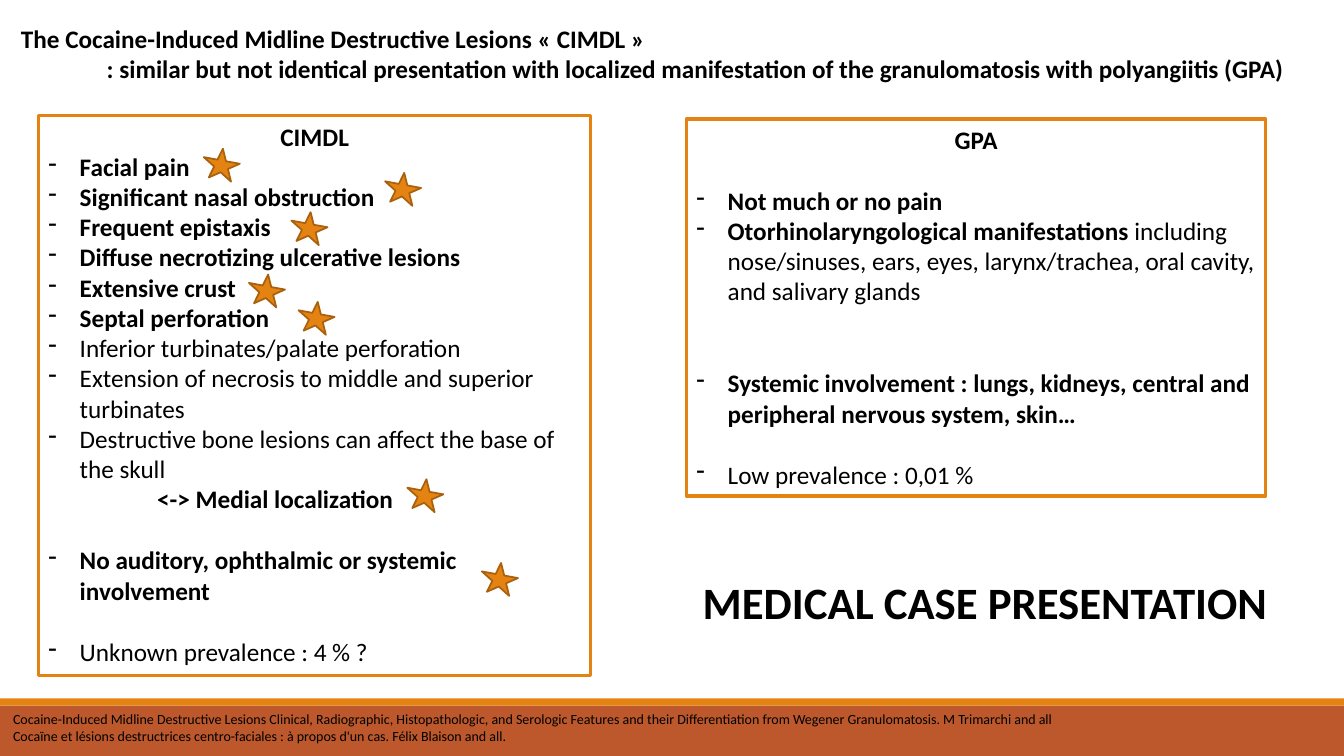
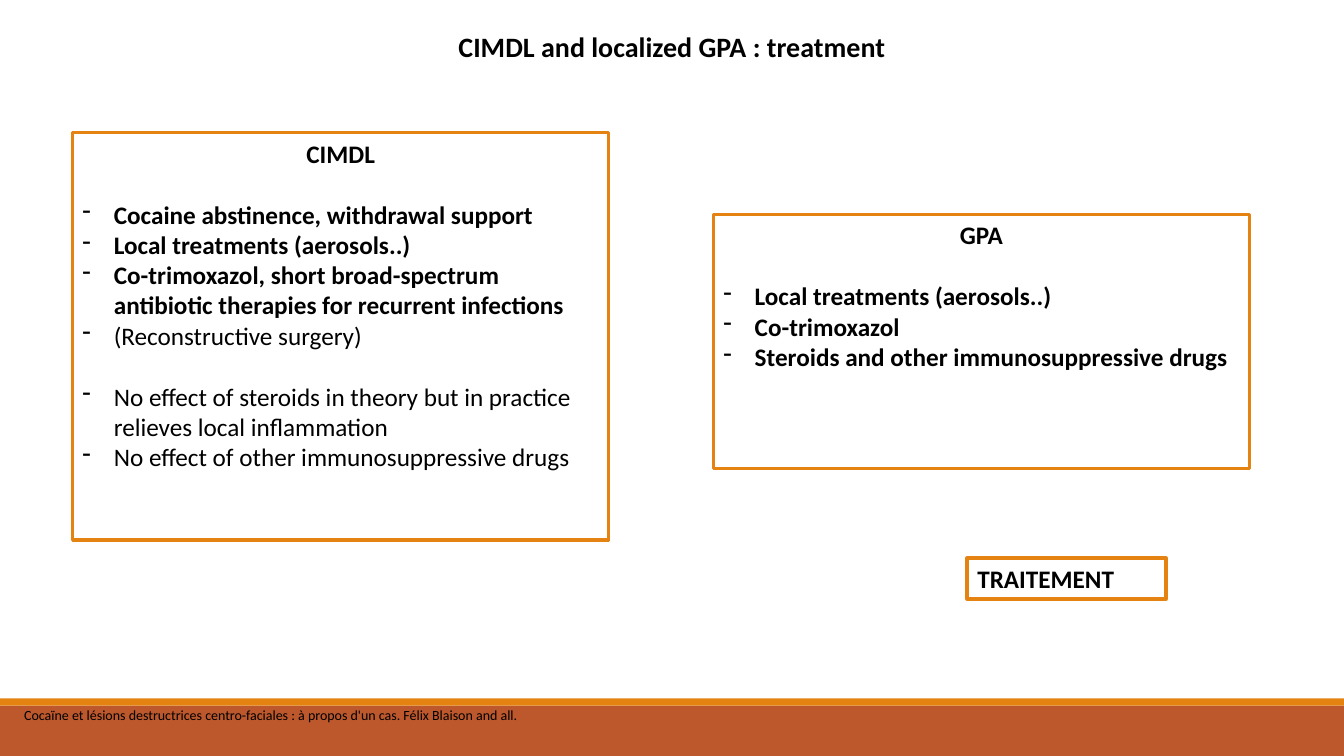
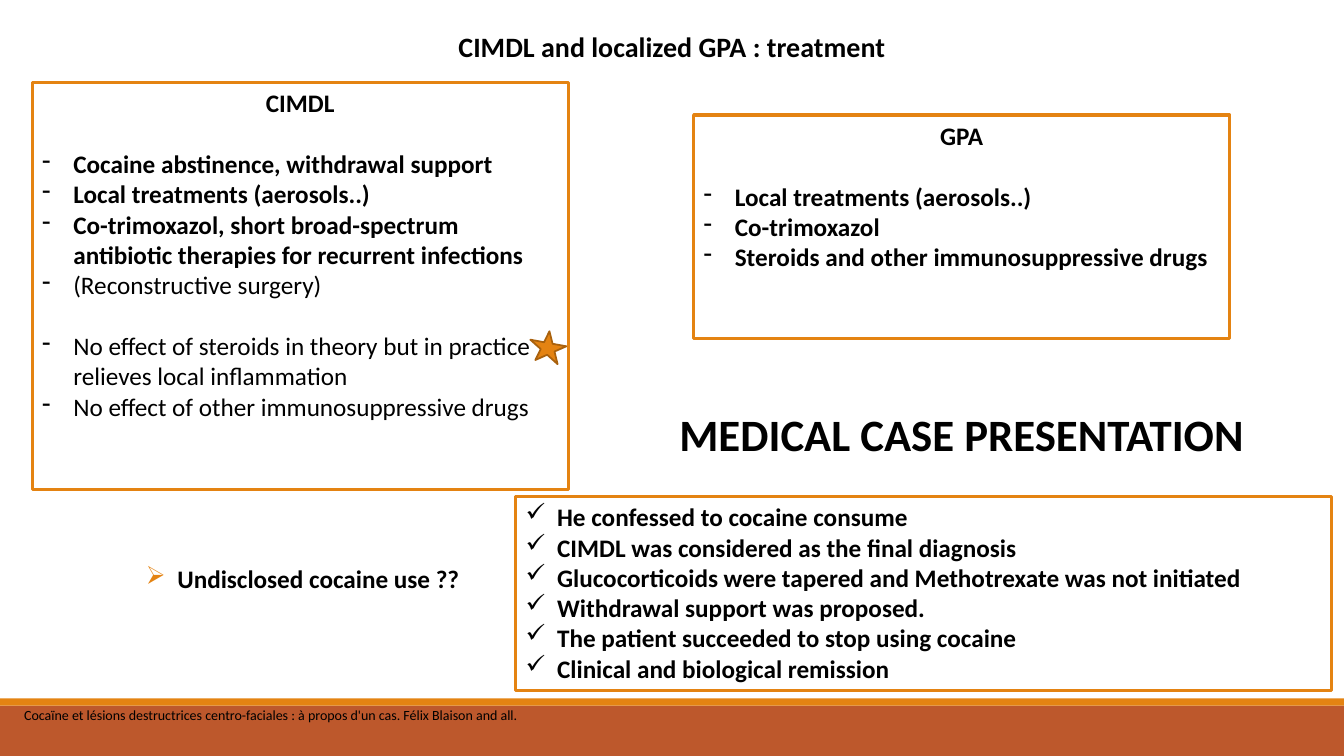
from dataclasses import dataclass

import lxml.etree
import pptx
import pptx.dml.color
import pptx.enum.shapes
import pptx.enum.text
import pptx.oxml.ns
import pptx.slide
import pptx.util

Cm = pptx.util.Cm
Pt = pptx.util.Pt
RGBColor = pptx.dml.color.RGBColor
Slide = pptx.slide.Slide
PRESET = pptx.enum.shapes.MSO_SHAPE
ALIGN = pptx.enum.text.PP_ALIGN

ORANGE = RGBColor(0xE4, 0x83, 0x12)
RUST = RGBColor(0xBD, 0x58, 0x2C)
STAR_EDGE = RGBColor(0xA9, 0x61, 0x0D)
BLACK = RGBColor(0, 0, 0)
FONT = "Calibri"

SLIDE_WIDTH, SLIDE_HEIGHT = 33.87, 19.05
HANGING = 0.79
BLANK_LINE = 22
PANEL_WIDTH = 13.51
CASE_WIDTH = 16.38


@dataclass(frozen=True)
class Area:
    left: float
    top: float
    width: float
    height: float

    def lengths(self) -> tuple[int, ...]:
        return tuple(Cm(n) for n in (self.left, self.top, self.width, self.height))


@dataclass(frozen=True)
class Line:
    text: str
    bold: bool = True
    plain_tail: str = ""
    bullet: str = ""
    bullet_color: RGBColor | None = None
    centered: bool = False
    indent: float = 0
    skipped: int = 0
    size: int = 18


def item(text: str, bold: bool = True, skipped: int = 0, tail: str = "", mark: str = "-") -> Line:
    return Line(text, bold, tail, mark, skipped=skipped)


def heading(text: str, size: int = 18) -> Line:
    return Line(text, centered=True, size=size)


BANDS = (
    (Area(0, 17.78, SLIDE_WIDTH, 1.27), RUST),
    (Area(0, 17.6, SLIDE_WIDTH, 0.18), ORANGE),
)

CASE_REPORT = "Cocaïne et lésions destructrices centro-faciales : à propos d'un cas. Félix Blaison and all."
CLINICAL_STUDY = (
    "Cocaine-Induced Midline Destructive Lesions Clinical, Radiographic, Histopathologic, and "
    "Serologic Features and their Differentiation from Wegener Granulomatosis. M Trimarchi and all"
)

CIMDL_SIGNS = (
    heading("CIMDL"),
    item("Facial pain"),
    item("Significant nasal obstruction"),
    item("Frequent epistaxis"),
    item("Diffuse necrotizing ulcerative lesions"),
    item("Extensive crust"),
    item("Septal perforation"),
    item("Inferior turbinates/palate perforation", bold=False),
    item("Extension of necrosis to middle and superior turbinates", bold=False),
    item("Destructive bone lesions can affect the base of the skull", bold=False),
    Line("<-> Medial localization", indent=2.74),
    item("No auditory, ophthalmic or systemic involvement", skipped=1),
    item("Unknown prevalence : 4 % ?", bold=False, skipped=1),
)
GPA_SIGNS = (
    heading("GPA"),
    item("Not much or no pain", skipped=1),
    item(
        "Otorhinolaryngological manifestations ",
        tail="including nose/sinuses, ears, eyes, larynx/trachea, oral cavity, and salivary glands",
    ),
    item(
        "Systemic involvement : lungs, kidneys, central and peripheral nervous system, skin…",
        skipped=2,
    ),
    item("Low prevalence : 0,01 %", bold=False, skipped=1),
)
CIMDL_TREATMENT = (
    heading("CIMDL"),
    item("Cocaine abstinence, withdrawal support", skipped=1),
    item("Local treatments (aerosols..)"),
    item("Co-trimoxazol, short broad-spectrum antibiotic therapies for recurrent infections"),
    item("(Reconstructive surgery)", bold=False),
    item(
        "No effect of steroids in theory but in practice relieves local inflammation",
        bold=False,
        skipped=1,
    ),
    item("No effect of other immunosuppressive drugs", bold=False),
)
GPA_TREATMENT = (
    heading("GPA"),
    item("Local treatments (aerosols..)", skipped=1),
    item("Co-trimoxazol"),
    item("Steroids and other immunosuppressive drugs"),
)
OUTCOME = tuple(
    item(text, mark="✓")
    for text in (
        "He confessed to cocaine consume",
        "CIMDL was considered as the final diagnosis",
        "Glucocorticoids were tapered and Methotrexate was not initiated",
        "Withdrawal support was proposed.",
        "The patient succeeded to stop using cocaine",
        "Clinical and biological remission",
    )
)
SIGN_STARS = (
    (5.13, 3.71),
    (9.7, 4.32),
    (7.34, 5.31),
    (6.27, 6.88),
    (7.52, 7.57),
    (10.26, 12.04),
    (12.14, 14.15),
)


def add_bullet(paragraph, line: Line) -> None:
    qn = pptx.oxml.ns.qn
    properties = paragraph._p.get_or_add_pPr()
    properties.set("marL", str(Cm(HANGING)))
    properties.set("indent", str(-Cm(HANGING)))
    if line.bullet_color is not None:
        tint = lxml.etree.SubElement(properties, qn("a:buClr"))
        lxml.etree.SubElement(tint, qn("a:srgbClr")).set("val", str(line.bullet_color))
    lxml.etree.SubElement(properties, qn("a:buChar")).set("char", line.bullet)


def write_line(paragraph, line: Line) -> None:
    paragraph.text = line.text
    if line.plain_tail:
        paragraph.add_run().text = line.plain_tail
    if line.bullet:
        add_bullet(paragraph, line)
    elif line.indent:
        paragraph._p.get_or_add_pPr().set("marL", str(Cm(line.indent)))
    paragraph.alignment = ALIGN.CENTER if line.centered else ALIGN.LEFT
    if line.skipped:
        paragraph.space_before = Pt(line.skipped * BLANK_LINE)
    for position, run in enumerate(paragraph.runs):
        run.font.name = FONT
        run.font.size = Pt(line.size)
        run.font.bold = line.bold and position == 0
        run.font.color.rgb = BLACK


def add_text(slide: Slide, area: Area, lines: tuple[Line, ...], border: float = 0) -> None:
    box = slide.shapes.add_textbox(*area.lengths())
    if border:
        box.line.color.rgb = ORANGE
        box.line.width = Pt(border)
    frame = box.text_frame
    frame.word_wrap = True
    for position, line in enumerate(lines):
        write_line(frame.add_paragraph() if position else frame.paragraphs[0], line)


def add_panel(slide: Slide, area: Area, lines: tuple[Line, ...]) -> None:
    add_text(slide, area, lines, border=2.25)


def add_star(slide: Slide, left: float, top: float) -> None:
    star = slide.shapes.add_shape(PRESET.STAR_5_POINT, *Area(left, top, 0.81, 0.89).lengths())
    star.rotation = 296.1
    star.shadow.inherit = False
    star.fill.solid()
    star.fill.fore_color.rgb = ORANGE
    star.line.color.rgb = STAR_EDGE
    star.line.width = Pt(1.25)


def add_footer(slide: Slide, left: float, top: float, *sources: str) -> None:
    lines = tuple(Line(source, bold=False, size=10) for source in sources)
    add_text(slide, Area(left, top, 32.23, 0.3 + 0.4 * len(lines)), lines)


def add_case_label(slide: Slide, left: float, top: float) -> None:
    label = heading("MEDICAL CASE PRESENTATION", size=32)
    add_text(slide, Area(left, top, CASE_WIDTH, 1.63), (label,))


def new_slide(deck) -> Slide:
    slide = deck.slides.add_slide(deck.slide_layouts[6])
    for area, color in BANDS:
        band = slide.shapes.add_shape(PRESET.RECTANGLE, *area.lengths())
        band.shadow.inherit = False
        band.fill.solid()
        band.fill.fore_color.rgb = color
        band.line.fill.background()
    return slide


def add_comparison(deck) -> None:
    slide = new_slide(deck)
    title = (
        Line("The Cocaine-Induced Midline Destructive Lesions « CIMDL »"),
        Line(
            ": similar but not identical presentation with localized manifestation "
            "of the granulomatosis with polyangiitis (GPA)",
            indent=2.16,
        ),
    )
    add_text(slide, Area(0.28, 0.46, 33.27, 1.8), title)
    add_panel(slide, Area(0.97, 2.92, 13.92, 14.1), CIMDL_SIGNS)
    add_footer(slide, 0.08, 17.78, CLINICAL_STUDY, CASE_REPORT)
    add_panel(slide, Area(17.3, 3, 14.6, 9.5), GPA_SIGNS)
    for left, top in SIGN_STARS:
        add_star(slide, left, top)
    add_case_label(slide, 16.64, 14.35)


def add_treatment(deck, cimdl: tuple[float, float], gpa: tuple[float, float], gpa_height: float) -> Slide:
    slide = new_slide(deck)
    add_panel(slide, Area(*cimdl, PANEL_WIDTH, 10.26), CIMDL_TREATMENT)
    title = heading("CIMDL and localized GPA : treatment", size=20)
    add_text(slide, Area(0, 0.61, SLIDE_WIDTH, 1.12), (title,))
    add_footer(slide, 0.36, 17.68, CASE_REPORT)
    add_panel(slide, Area(*gpa, PANEL_WIDTH, gpa_height), GPA_TREATMENT)
    return slide


def main() -> None:
    deck = pptx.Presentation()
    deck.slide_width = Cm(SLIDE_WIDTH)
    deck.slide_height = Cm(SLIDE_HEIGHT)

    add_comparison(deck)

    overview = add_treatment(deck, (1.83, 3.35), (17.98, 5.41), 6.4)
    add_text(overview, Area(24.38, 14.07, 5, 1.02), (Line("TRAITEMENT"),), border=3)

    case = add_treatment(deck, (0.81, 2.08), (17.48, 2.9), 5.64)
    add_star(case, 13.36, 8.31)
    question = Line("Undisclosed cocaine use ??", bullet="➢", bullet_color=ORANGE)
    add_text(case, Area(3.43, 14.07, 11.66, 1.02), (question,))
    add_panel(case, Area(13, 12.52, 20.55, 4.88), OUTCOME)
    add_case_label(case, 16.05, 10.13)

    deck.save("out.pptx")


if __name__ == "__main__":
    main()
